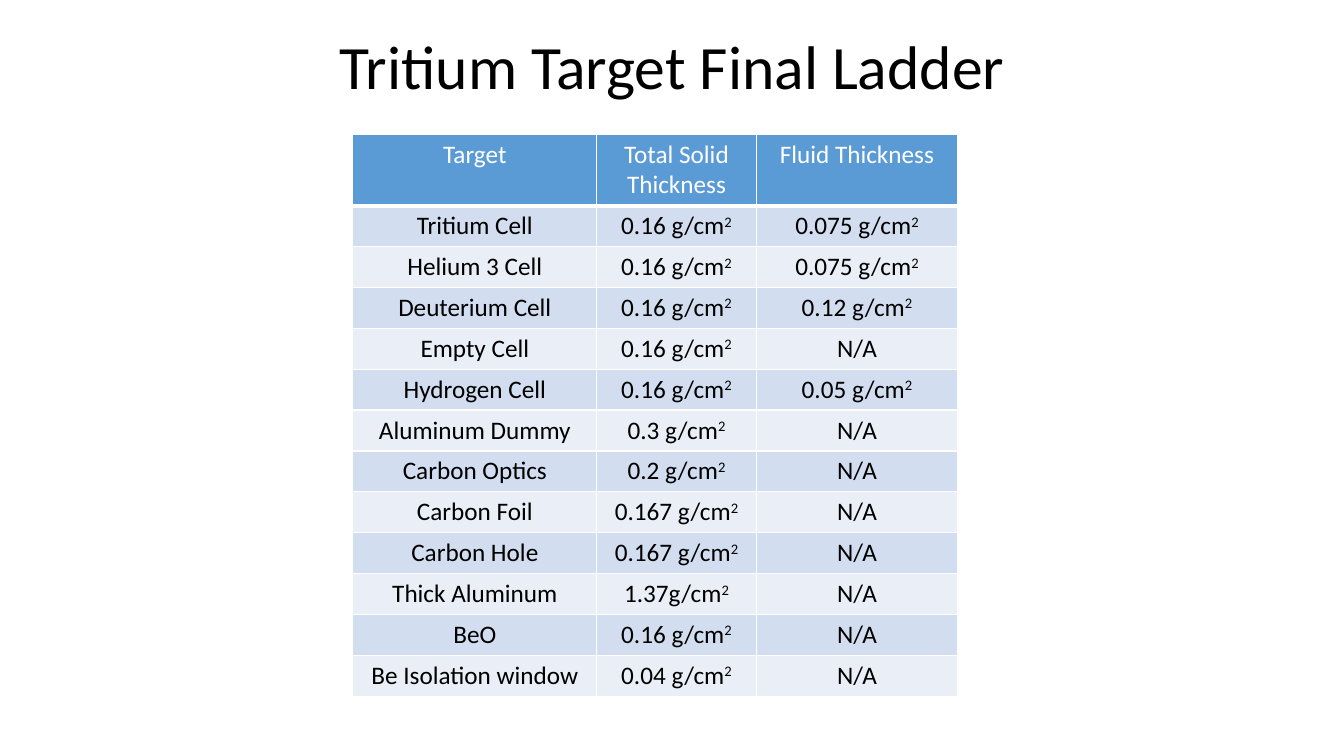
from lxml.etree import SubElement
from pptx import Presentation
from pptx.dml.color import RGBColor
from pptx.enum.text import MSO_ANCHOR as Anchor, PP_ALIGN as Align
from pptx.oxml.ns import qn
from pptx.util import Inches, Pt

FONT = "Calibri"
BLACK = RGBColor(0x00, 0x00, 0x00)
WHITE = RGBColor(0xFF, 0xFF, 0xFF)
HEADER_BLUE = RGBColor(0x5B, 0x9B, 0xD5)
BANDS = (RGBColor(0xD2, 0xDE, 0xEF), RGBColor(0xEA, 0xEF, 0xF7))

HEADINGS = ("Target", "Total Solid Thickness", "Fluid Thickness")
TARGETS = (
    ("Tritium Cell", "0.16 g/cm²", "0.075 g/cm²"),
    ("Helium 3 Cell", "0.16 g/cm²", "0.075 g/cm²"),
    ("Deuterium Cell", "0.16 g/cm²", "0.12 g/cm²"),
    ("Empty Cell", "0.16 g/cm²", "N/A"),
    ("Hydrogen Cell", "0.16 g/cm²", "0.05 g/cm²"),
    ("Aluminum Dummy", "0.3 g/cm²", "N/A"),
    ("Carbon Optics", "0.2 g/cm²", "N/A"),
    ("Carbon Foil", "0.167 g/cm²", "N/A"),
    ("Carbon Hole", "0.167 g/cm²", "N/A"),
    ("Thick Aluminum", "1.37g/cm²", "N/A"),
    ("BeO", "0.16 g/cm²", "N/A"),
    ("Be Isolation window", "0.04 g/cm²", "N/A"),
)
COLUMN_WIDTHS = (2.42, 1.58, 2)
TABLE_HEIGHT = 5.57
HEADER_HEIGHT = 0.7


def write_text(frame, text, size=18, color=BLACK, line_spacing=None):
    para = frame.paragraphs[0]
    para.alignment = Align.CENTER
    para.line_spacing = line_spacing
    base, square, _ = text.partition("²")
    for part, raised in ((base, False), ("2" if square else "", True)):
        if not part:
            continue
        span = para.add_run()
        span.text = part
        span.font.name = FONT
        span.font.size = Pt(size)
        span.font.bold = False
        span.font.color.rgb = color
        if raised:
            span.font._element.set("baseline", "30000")


def set_borders(cell, bottom=1):
    properties = cell._tc.get_or_add_tcPr()
    for side, width in (("L", 1), ("R", 1), ("T", 1), ("B", bottom)):
        line = SubElement(properties, qn(f"a:ln{side}"), w=str(Pt(width)))
        fill = SubElement(line, qn("a:solidFill"))
        SubElement(fill, qn("a:srgbClr"), val=str(WHITE))


def fill_cell(cell, text, fill, color=BLACK, bottom=1):
    set_borders(cell, bottom)
    cell.fill.solid()
    cell.fill.fore_color.rgb = fill
    write_text(cell.text_frame, text, color=color)


def add_title(page, text):
    title = page.shapes.title
    title.left, title.top = Inches(2.17), Inches(0.3)
    title.width, title.height = Inches(9), Inches(0.78)
    title.text_frame.vertical_anchor = Anchor.MIDDLE
    write_text(title.text_frame, text, size=44, line_spacing=0.9)


def add_target_table(page):
    table = page.shapes.add_table(
        len(TARGETS) + 1, len(HEADINGS), Inches(3.5), Inches(1.33),
        Inches(sum(COLUMN_WIDTHS)), Inches(TABLE_HEIGHT)).table
    for column, width in zip(table.columns, COLUMN_WIDTHS):
        column.width = Inches(width)
    body_height = (TABLE_HEIGHT - HEADER_HEIGHT) / len(TARGETS)
    for index, row in enumerate(table.rows):
        row.height = Inches(body_height if index else HEADER_HEIGHT)
    for column, heading in enumerate(HEADINGS):
        fill_cell(table.cell(0, column), heading, HEADER_BLUE,
                  color=WHITE, bottom=3)
    for index, target in enumerate(TARGETS):
        for column, text in enumerate(target):
            fill_cell(table.cell(index + 1, column), text, BANDS[index % 2])


def main():
    deck = Presentation()
    deck.slide_width, deck.slide_height = Inches(13.33), Inches(7.5)
    page = deck.slides.add_slide(deck.slide_layouts[5])
    add_title(page, "Tritium Target Final Ladder")
    add_target_table(page)
    deck.save("out.pptx")


if __name__ == "__main__":
    main()
